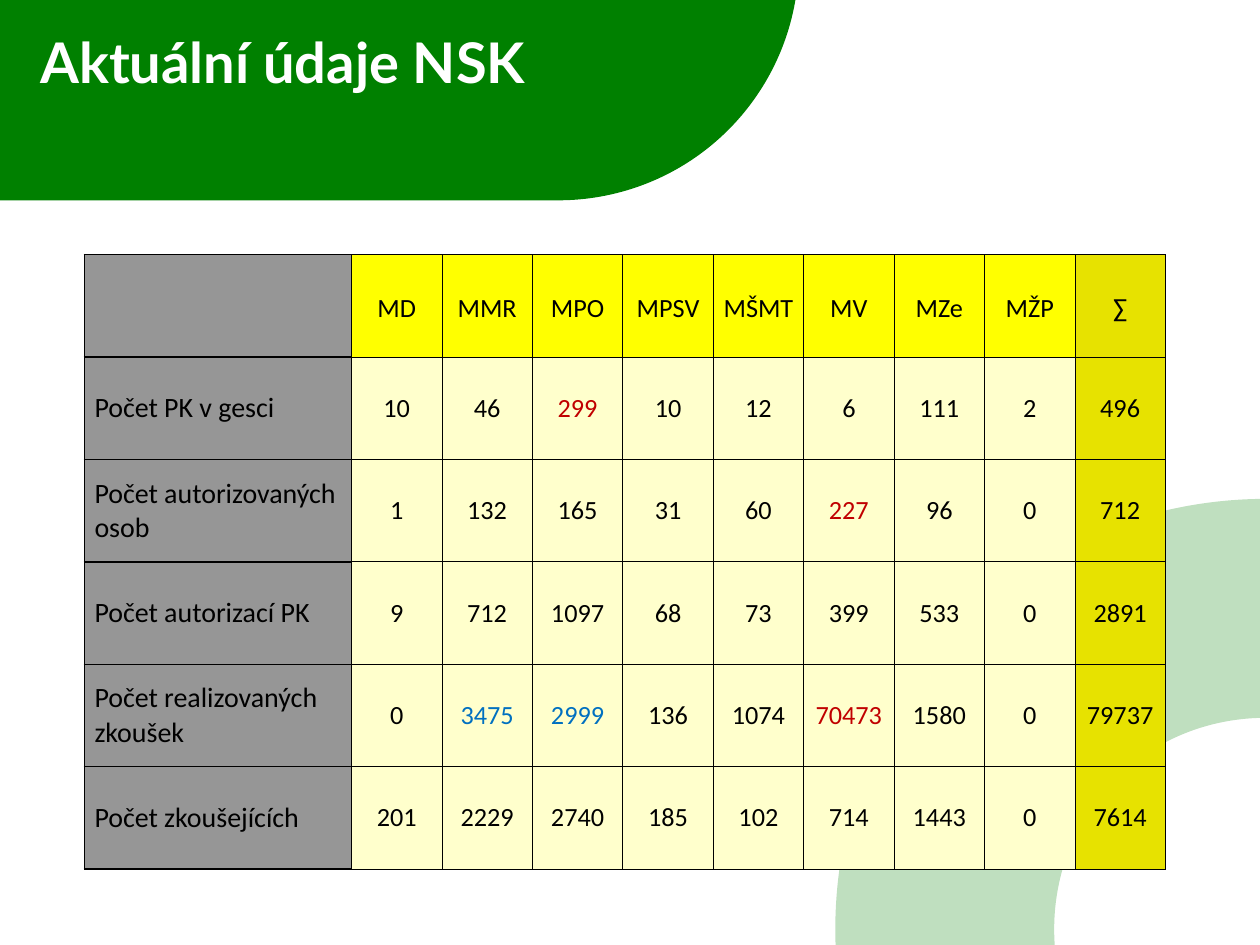
from dataclasses import dataclass, field

from lxml import etree
from pptx import Presentation
from pptx.dml.color import RGBColor
from pptx.enum.shapes import MSO_SHAPE
from pptx.enum.text import MSO_ANCHOR, PP_ALIGN
from pptx.oxml.ns import qn
from pptx.util import Inches, Pt

ROUND_RECT, BLOCK_ARC = MSO_SHAPE.ROUNDED_RECTANGLE, MSO_SHAPE.BLOCK_ARC
LEFT, CENTER = PP_ALIGN.LEFT, PP_ALIGN.CENTER
TOP, MIDDLE = MSO_ANCHOR.TOP, MSO_ANCHOR.MIDDLE

GREEN, WHITE, BLACK = "008000", "FFFFFF", "000000"
RED, BLUE = "C00000", "0070C0"
LABEL_FILL, HEAD_FILL, BODY_FILL, SUM_FILL = "969696", "FFFF00", "FFFFCC", "E7E200"

TABLE_BOX = (0.67, 2.02, 8.58, 4.88)
LABEL_WIDTH = 2.12
THIN, THICK = 0.5, 1


@dataclass
class Row:
    label: str
    values: list[str]
    accents: dict[int, str] = field(default_factory=dict)


@dataclass
class CellStyle:
    fill: str
    size: float = 15
    align: PP_ALIGN = CENTER
    side_margin: float = 0.03
    spacing: float = 1.0


LABEL = CellStyle(LABEL_FILL, size=16, align=LEFT, side_margin=0.08)
HEAD = CellStyle(HEAD_FILL, side_margin=0.07, spacing=1.15)
HEAD_SUM = CellStyle(SUM_FILL, side_margin=0.07, spacing=1.15)
BODY = CellStyle(BODY_FILL)
BODY_SUM = CellStyle(SUM_FILL)

ROWS = [
    Row("", ["MD", "MMR", "MPO", "MPSV", "MŠMT", "MV", "MZe", "MŽP", "∑"]),
    Row("Počet PK v gesci",
        ["10", "46", "299", "10", "12", "6", "111", "2", "496"], {2: RED}),
    Row("Počet autorizovaných osob",
        ["1", "132", "165", "31", "60", "227", "96", "0", "712"], {5: RED}),
    Row("Počet autorizací PK",
        ["9", "712", "1097", "68", "73", "399", "533", "0", "2891"]),
    Row("Počet realizovaných zkoušek",
        ["0", "3475", "2999", "136", "1074", "70473", "1580", "0", "79737"],
        {1: BLUE, 2: BLUE, 5: RED}),
    Row("Počet zkoušejících",
        ["201", "2229", "2740", "185", "102", "714", "1443", "0", "7614"]),
]


def rgb(color: str) -> RGBColor:
    return RGBColor.from_string(color)


def add_green_shape(s, kind, box):
    sp = s.shapes.add_shape(kind, *map(Inches, box))
    sp.shadow.inherit = False
    sp.fill.solid()
    sp.fill.fore_color.rgb = rgb(GREEN)
    sp.line.fill.background()
    return sp


def add_background(s) -> None:
    arc = add_green_shape(s, BLOCK_ARC, (6.69, 3.9, 6.95, 7.18))
    arc.rotation = 313.9
    color = arc.element.spPr.find(qn("a:solidFill"))[0]
    etree.SubElement(color, qn("a:alpha"), val="25000")
    banner = add_green_shape(s, ROUND_RECT, (-3.5, -2.23, 9.84, 3.82))
    banner.adjustments[0] = 0.5


def set_title(s, text: str) -> None:
    """Fill the title placeholder and bring it in front of the banner."""
    title = s.shapes.title
    title.left, title.top, title.width, title.height = map(Inches, (0.22, 0.17, 5.96, 1.11))
    tf = title.text_frame
    tf.text = text
    tf.vertical_anchor = TOP
    p = tf.paragraphs[0]
    p.alignment = LEFT
    font = p.runs[0].font
    font.name, font.size, font.bold = "Lato", Pt(32), True
    font.color.rgb = rgb(WHITE)
    s.shapes.element.append(title.element)


def set_borders(cell, widths: dict[str, float]) -> None:
    tc_pr = cell._tc.get_or_add_tcPr()
    for side, width in widths.items():
        ln = etree.SubElement(tc_pr, qn(f"a:ln{side}"), w=str(Pt(width)))
        fill = etree.SubElement(ln, qn("a:solidFill"))
        etree.SubElement(fill, qn("a:srgbClr"), val=BLACK)


def fill_cell(cell, text: str, style: CellStyle, color: str = BLACK) -> None:
    cell.fill.solid()
    cell.fill.fore_color.rgb = rgb(style.fill)
    cell.vertical_anchor = MIDDLE
    cell.margin_left = cell.margin_right = Inches(style.side_margin)
    cell.margin_top = cell.margin_bottom = 0
    cell.text_frame.text = text
    p = cell.text_frame.paragraphs[0]
    p.alignment, p.line_spacing = style.align, style.spacing
    for r in p.runs:
        r.font.name, r.font.size = "Calibri", Pt(style.size)
        r.font.color.rgb = rgb(color)


def add_data_table(s, rows: list[Row]) -> None:
    n_values = len(rows[0].values)
    table = s.shapes.add_table(len(rows), n_values + 1, *map(Inches, TABLE_BOX)).table
    table.first_row = table.horz_banding = False
    for c, column in enumerate(table.columns):
        column.width = Inches((TABLE_BOX[2] - LABEL_WIDTH) / n_values if c else LABEL_WIDTH)
    for i, row in enumerate(rows):
        table.rows[i].height = Inches(TABLE_BOX[3] / len(rows))
        label = table.cell(i, 0)
        set_borders(label, dict.fromkeys("LRTB", THICK))
        fill_cell(label, row.label, LABEL)
        for j, value in enumerate(row.values):
            cell = table.cell(i, j + 1)
            set_borders(cell, {"L": THIN if j else THICK, "R": THIN, "T": THIN, "B": THIN})
            if j == n_values - 1:
                style = BODY_SUM if i else HEAD_SUM
            else:
                style = BODY if i else HEAD
            fill_cell(cell, value, style, row.accents.get(j, BLACK))


def main() -> None:
    prs = Presentation()
    prs.slide_width, prs.slide_height = Inches(10), Inches(7.5)
    s = prs.slides.add_slide(prs.slide_layouts[5])
    add_background(s)
    set_title(s, "Aktuální údaje NSK")
    add_data_table(s, ROWS)
    prs.save("out.pptx")


if __name__ == "__main__":
    main()
